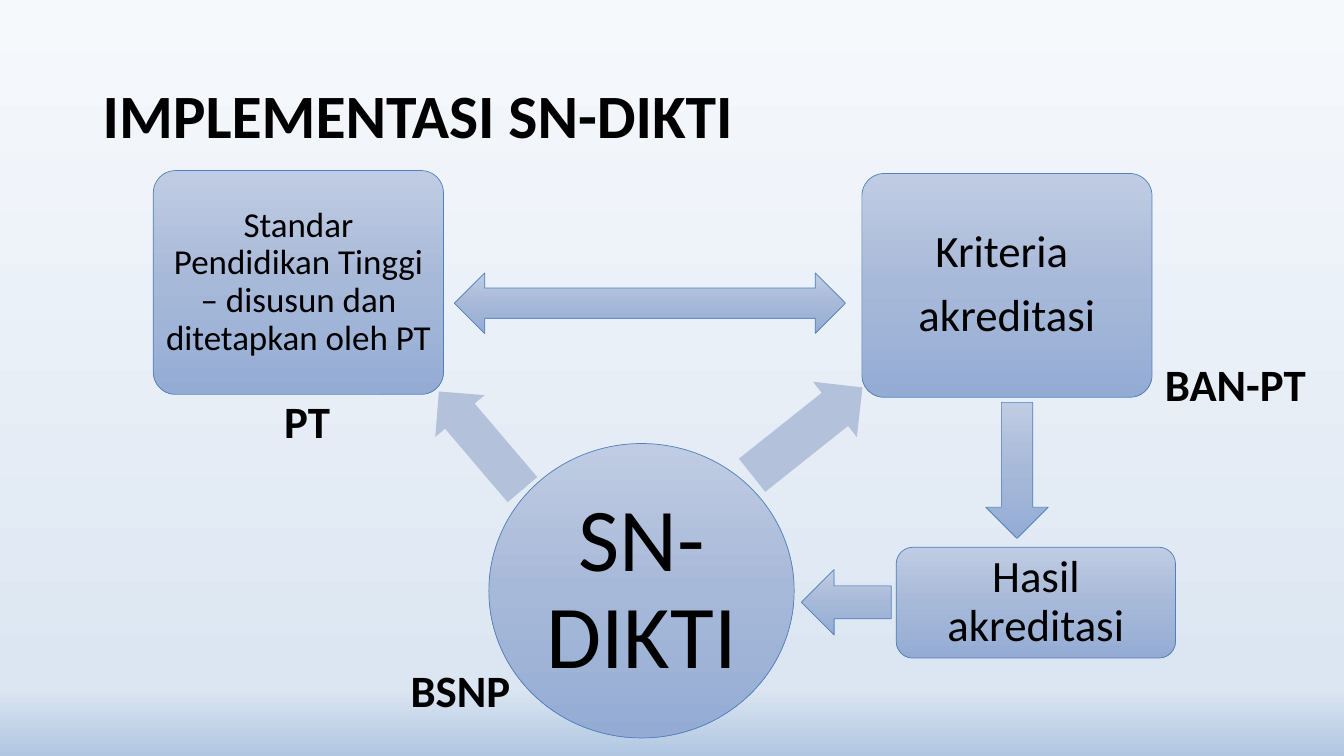
"""Build the SN-DIKTI implementation cycle slide."""
from copy import deepcopy
from dataclasses import dataclass

from pptx import Presentation
from pptx.dml.color import RGBColor
from pptx.dml.fill import FillFormat
from pptx.enum.shapes import MSO_SHAPE as Preset
from pptx.enum.text import MSO_ANCHOR as Anchor, PP_ALIGN as Align
from pptx.oxml.xmlchemy import BaseOxmlElement as Element
from pptx.shapes.autoshape import Shape
from pptx.slide import Slide
from pptx.text.text import TextFrame
from pptx.util import Inches, Pt

WIDTH, HEIGHT = Inches(13.33), Inches(7.5)
COLUMNS, ROWS = 32, 18
FONT = "Calibri"
BLACK = RGBColor(0x00, 0x00, 0x00)
OUTLINE = RGBColor(0x4F, 0x81, 0xBD)
PALE_ARROW = RGBColor(0xB3, 0xC1, 0xDB)
SKY = ((0, RGBColor(0xF6, 0xF9, 0xFC)), (0.91, RGBColor(0xDC, 0xE6, 0xF2)),
       (1, RGBColor(0xB0, 0xC6, 0xE1)))
STEEL = ((0, RGBColor(0xC0, 0xCC, 0xE3)), (0.5, RGBColor(0xA7, 0xB9, 0xD8)),
         (1, RGBColor(0x94, 0xAC, 0xD4)))


@dataclass(frozen=True)
class Area:
    """A rectangle in grid columns and rows."""
    column: float
    row: float
    columns: float
    rows: float

    def emu(self) -> tuple[int, int, int, int]:
        """Return left, top, width and height in slide units."""
        return (round(self.column * WIDTH / COLUMNS), round(self.row * HEIGHT / ROWS),
                round(self.columns * WIDTH / COLUMNS), round(self.rows * HEIGHT / ROWS))


@dataclass(frozen=True)
class Stage:
    """A named step of the cycle."""
    text: str
    area: Area
    size: float
    preset: Preset = Preset.ROUNDED_RECTANGLE
    corner: float = 0.1
    inset: float = 0.06


@dataclass(frozen=True)
class Arrow:
    """A block arrow between two stages."""
    preset: Preset
    area: Area
    rotation: float = 0
    pale: bool = False


@dataclass(frozen=True)
class Label:
    """A bold text without a frame."""
    text: str
    area: Area
    size: float = 32
    align: Align = Align.CENTER
    anchor: Anchor = Anchor.TOP
    line_spacing: float = 1


STAGES = (
    Stage("SN-DIKTI", Area(11.64, 10.56, 7.27, 7.01), 64, Preset.OVAL, inset=0.03),
    Stage("Standar Pendidikan Tinggi – disusun dan ditetapkan oleh PT",
          Area(3.65, 4.06, 6.91, 5.33), 25),
    Stage("Kriteria \nakreditasi", Area(20.52, 4.13, 6.91, 5.33), 32),
    Stage("Hasil akreditasi", Area(21.34, 13.03, 6.65, 2.64), 32, corner=0.15),
)
ARROWS = (
    Arrow(Preset.LEFT_ARROW, Area(9.91, 9.72, 3.07, 1.54), 49.6, True),
    Arrow(Preset.LEFT_ARROW, Area(17.54, 9.43, 3.36, 1.68), 141.5, True),
    Arrow(Preset.LEFT_RIGHT_ARROW, Area(10.82, 6.5, 9.31, 1.44)),
    Arrow(Preset.DOWN_ARROW, Area(23.47, 9.58, 1.49, 3.24)),
    Arrow(Preset.LEFT_ARROW, Area(19.08, 13.56, 2.14, 1.56)),
)
LABELS = (
    Label("IMPLEMENTASI SN-DIKTI", Area(2.21, 1.08, 27.62, 3.48), 44,
          Align.LEFT, Anchor.MIDDLE, 0.9),
    Label("BAN-PT", Area(27.5, 8.38, 3.89, 1.54), align=Align.LEFT),
    Label("BSNP", Area(9.43, 15.67, 3.07, 1.54)),
    Label("PT", Area(5.78, 9.26, 3.07, 1.54)),
)


def shade(fill: FillFormat, owner: Element, stops: tuple) -> None:
    """Fill from top to bottom through three colour stops."""
    fill.gradient()
    fill.gradient_angle = 270
    stop_list = owner.xpath(".//a:gsLst")[0]
    stop_list.append(deepcopy(stop_list[-1]))
    for stop, (position, color) in zip(fill.gradient_stops, stops):
        stop.position = position
        stop.color.rgb = color


def write(frame: TextFrame, text: str, size: float, align: Align, anchor: Anchor,
          line_spacing: float, after: float = 0, bold: bool = False) -> None:
    """Set and format the text of a frame."""
    frame.text = text
    frame.word_wrap = True
    frame.vertical_anchor = anchor
    for paragraph in frame.paragraphs:
        paragraph.alignment = align
        paragraph.line_spacing = line_spacing
        paragraph.space_after = Pt(after)
        for run in paragraph.runs:
            run.font.name = FONT
            run.font.size = Pt(size)
            run.font.bold = bold
            run.font.color.rgb = BLACK


def draw_block(slide: Slide, preset: Preset, area: Area) -> Shape:
    """Draw a shaded, outlined preset shape."""
    block = slide.shapes.add_shape(preset, *area.emu())
    block.shadow.inherit = False
    shade(block.fill, block.element, STEEL)
    block.line.color.rgb = OUTLINE
    block.line.width = Pt(0.5)
    return block


def draw_stage(slide: Slide, stage: Stage) -> None:
    """Draw a stage with its centred text."""
    block = draw_block(slide, stage.preset, stage.area)
    if stage.preset == Preset.ROUNDED_RECTANGLE:
        block.adjustments[0] = stage.corner
    frame = block.text_frame
    frame.margin_left = frame.margin_right = Inches(stage.inset)
    frame.margin_top = frame.margin_bottom = Inches(stage.inset)
    write(frame, stage.text, stage.size, Align.CENTER, Anchor.MIDDLE, 0.9,
          after=round(stage.size * 0.35, 1))


def draw_arrow(slide: Slide, arrow: Arrow) -> None:
    """Draw a block arrow, pale ones flat and without outline."""
    block = draw_block(slide, arrow.preset, arrow.area)
    block.rotation = arrow.rotation
    if arrow.pale:
        block.adjustments[0] = 0.6
        block.fill.solid()
        block.fill.fore_color.rgb = PALE_ARROW
        block.line.fill.background()


def draw_label(slide: Slide, label: Label) -> None:
    """Draw a bold label."""
    frame = slide.shapes.add_textbox(*label.area.emu()).text_frame
    write(frame, label.text, label.size, label.align, label.anchor,
          label.line_spacing, bold=True)


def main() -> None:
    """Build and save the slide."""
    deck = Presentation()
    deck.slide_width, deck.slide_height = WIDTH, HEIGHT
    slide = deck.slides.add_slide(deck.slide_layouts[6])
    shade(slide.background.fill, slide.element, SKY)
    for arrow in ARROWS:
        draw_arrow(slide, arrow)
    for stage in STAGES:
        draw_stage(slide, stage)
    for label in LABELS:
        draw_label(slide, label)
    deck.save("out.pptx")


if __name__ == "__main__":
    main()
